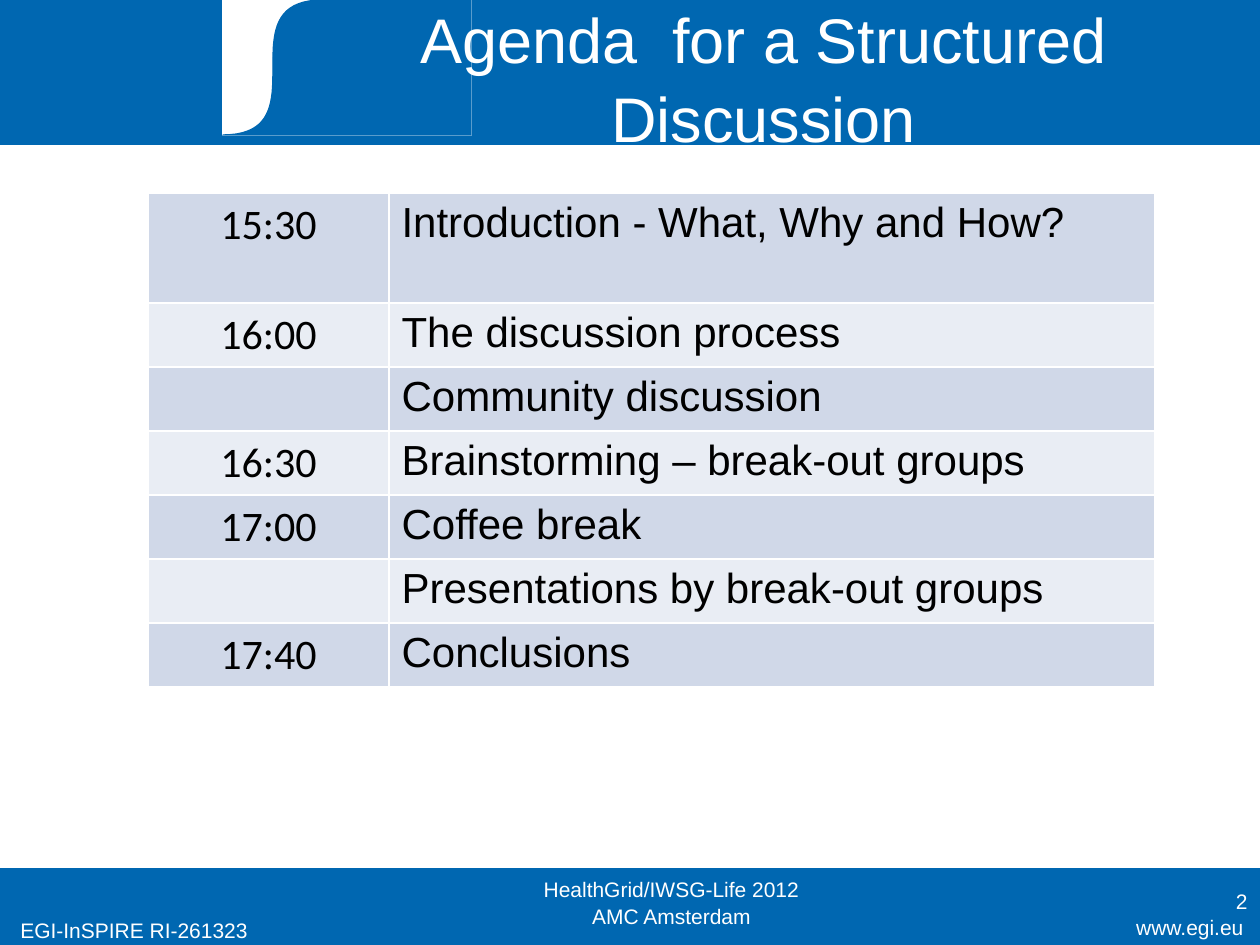
from lxml.etree import SubElement
from pptx import Presentation
from pptx.dml.color import RGBColor
from pptx.enum.shapes import MSO_SHAPE
from pptx.enum.text import MSO_ANCHOR, PP_ALIGN
from pptx.oxml.ns import qn
from pptx.util import Pt

PX = 914400 // 126
BLUE = RGBColor(0x00, 0x67, 0xB1)
WHITE = RGBColor(0xFF, 0xFF, 0xFF)
BLACK = RGBColor(0x00, 0x00, 0x00)
BANDS = (RGBColor(0xD0, 0xD8, 0xE8), RGBColor(0xE9, 0xED, 0xF4))

AGENDA = [
    ("15:30", "Introduction - What, Why and How?"),
    ("16:00", "The discussion process"),
    ("", "Community discussion"),
    ("16:30", "Brainstorming – break-out groups"),
    ("17:00", "Coffee break"),
    ("", "Presentations by break-out groups"),
    ("17:40", "Conclusions"),
]


def px(*lengths):
    return [n * PX for n in lengths]


def paint(sp, color):
    sp.shadow.inherit = False
    sp.fill.solid()
    sp.fill.fore_color.rgb = color
    sp.line.color.rgb = color
    sp.line.width = Pt(0.75)


def set_font(p, name, size, color):
    p.font.name = name
    p.font.size = Pt(size)
    p.font.color.rgb = color


def add_rect(s, x, y, w, h, color):
    sp = s.shapes.add_shape(MSO_SHAPE.RECTANGLE, *px(x, y, w, h))
    paint(sp, color)


def add_text(s, box, lines, size=12, align=PP_ALIGN.LEFT,
             anchor=MSO_ANCHOR.MIDDLE, spacing=1.0):
    tf = s.shapes.add_textbox(*px(*box)).text_frame
    tf.word_wrap = True
    tf.vertical_anchor = anchor
    for i, line in enumerate(lines):
        p = tf.paragraphs[0] if i == 0 else tf.add_paragraph()
        p.text = line
        p.alignment = align
        p.line_spacing = spacing
        set_font(p, "Arial", size, WHITE)


def bezier(p0, p1, p2, p3, steps=40):
    points = []
    for i in range(1, steps + 1):
        t = i / steps
        u = 1 - t
        points.append(tuple(
            round(u**3 * a + 3 * u * u * t * b + 3 * u * t * t * c + t**3 * d)
            for a, b, c, d in zip(p0, p1, p2, p3)))
    return points


def add_header(s, x, y, w, h):
    """Blue band with a curved white tab and the slide title."""
    add_rect(s, x, y, w, h, BLUE)
    left, right, bend, bottom = x + 223, x + 471, x + 323, y + 135
    add_rect(s, left, y, right - left, bottom - y, WHITE)
    corners = [px(left, bottom), px(bend, bottom), px(left, y), px(bend, y)]
    builder = s.shapes.build_freeform(*px(right, y))
    builder.add_line_segments(
        [px(right, bottom), corners[0], *bezier(*corners)], close=True)
    paint(builder.convert_to_shape(), BLUE)
    add_text(s, (x + 292, y + 16, 943, 120),
             ["Agenda  for a Structured Discussion"],
             36, PP_ALIGN.CENTER, spacing=1.05)


def add_footer(s, x, y, w, h):
    add_rect(s, x, y, w, h, BLUE)
    add_text(s, (x + 1057, y + 39, 199, 36), ["www.egi.eu"],
             align=PP_ALIGN.RIGHT, anchor=MSO_ANCHOR.TOP)
    add_text(s, (x + 8, y + 42, 315, 34), ["EGI-InSPIRE RI-261323"],
             anchor=MSO_ANCHOR.TOP)
    add_text(s, (x + 485, y + 8, 373, 50),
             ["HealthGrid/IWSG-Life 2012", "AMC Amsterdam"],
             align=PP_ALIGN.CENTER, spacing=1.05)
    add_text(s, (x + 967, y + 7, 293, 50), ["2"], align=PP_ALIGN.RIGHT)


def style_cell(cell, color):
    """White 1 pt borders around a plain fill."""
    tc_pr = cell._tc.get_or_add_tcPr()
    for side in ("a:lnL", "a:lnR", "a:lnT", "a:lnB"):
        ln = SubElement(tc_pr, qn(side), w=str(Pt(1)))
        fill = SubElement(ln, qn("a:solidFill"))
        SubElement(fill, qn("a:srgbClr"), val=str(WHITE))
    cell.fill.solid()
    cell.fill.fore_color.rgb = color


def add_agenda(s, x, y, w, h):
    time_w, row_h = 241, 64
    table = s.shapes.add_table(len(AGENDA), 2, *px(x, y, w, h)).table
    table.first_row = table.horz_banding = False
    table.columns[0].width, table.columns[1].width = px(time_w, w - time_w)
    first_h = h - row_h * (len(AGENDA) - 1)
    for i, texts in enumerate(AGENDA):
        table.rows[i].height = (row_h if i else first_h) * PX
        for j, text in enumerate(texts):
            cell = table.cell(i, j)
            style_cell(cell, BANDS[i % 2])
            p = cell.text_frame.paragraphs[0]
            p.text = text
            p.alignment = PP_ALIGN.LEFT if j else PP_ALIGN.CENTER
            set_font(p, "Arial" if j else "Calibri", 24, BLACK)


def main():
    prs = Presentation()
    prs.slide_width, prs.slide_height = px(1260, 945)
    s = prs.slides.add_slide(prs.slide_layouts[6])
    add_footer(s, 0, 869, 1260, 76)
    add_header(s, 0, 0, 1260, 144)
    add_agenda(s, 148, 193, 1007, 494)
    prs.save("out.pptx")


if __name__ == "__main__":
    main()
